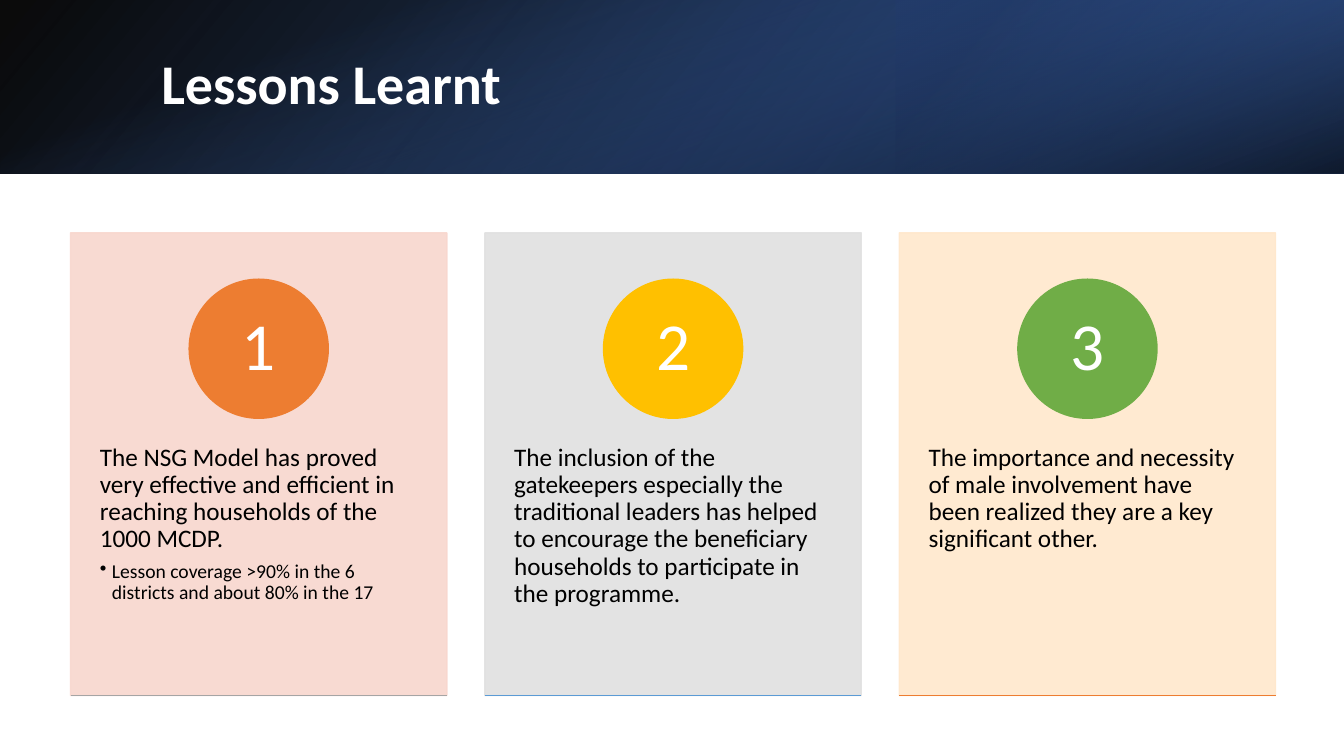
"""Build the Lessons Learnt slide with three numbered cards."""
from dataclasses import dataclass
from typing import Optional

from lxml.etree import SubElement
from pptx import Presentation
from pptx.dml.color import RGBColor
from pptx.enum.shapes import MSO_CONNECTOR as Connector, MSO_SHAPE as Preset
from pptx.enum.text import MSO_ANCHOR as Anchor, MSO_AUTO_SIZE as AutoSize, PP_ALIGN as Align
from pptx.oxml.ns import qn
from pptx.util import Emu, Inches, Pt

SLIDE_WIDTH, SLIDE_HEIGHT = Inches(13.33), Inches(7.5)
FONT = "Calibri"
BLACK = RGBColor(0x00, 0x00, 0x00)
WHITE = RGBColor(0xFF, 0xFF, 0xFF)
NAVY = RGBColor(0x20, 0x38, 0x64)
DENIM = RGBColor(0x2F, 0x55, 0x97)
BLUE = RGBColor(0x44, 0x72, 0xC4)
SKY = RGBColor(0x5B, 0x9B, 0xD5)
ORANGE = RGBColor(0xED, 0x7D, 0x31)
GOLD = RGBColor(0xFF, 0xC0, 0x00)
GREEN = RGBColor(0x70, 0xAD, 0x47)
GREY = RGBColor(0xA5, 0xA5, 0xA5)
ROSE = RGBColor(0xF8, 0xD7, 0xCE)
SILVER = RGBColor(0xE1, 0xE1, 0xE1)
PEACH = RGBColor(0xFF, 0xE8, 0xCC)


def across(percent: float) -> Emu:
    """Return a share of the slide's width."""
    return Emu(round(SLIDE_WIDTH * percent / 100))


def down(percent: float) -> Emu:
    """Return a share of the slide's height."""
    return Emu(round(SLIDE_HEIGHT * percent / 100))


HEADER_HEIGHT = down(22.93)
CARD_LEFT, CARD_WIDTH, CARD_PITCH = across(5.25), across(28), across(30.83)
CARD_TOP, CARD_HEIGHT = down(30.8), down(61.2)
LESSON_TOP, LESSON_HEIGHT = down(54), down(36.67)
CIRCLE_TOP, CIRCLE_SIZE, NUMBER_SIZE = down(36.93), down(18.4), down(12.93)


@dataclass(frozen=True)
class Stop:
    """Describe one gradient stop."""
    position: float
    color: RGBColor
    opacity: int


@dataclass(frozen=True)
class Band:
    """Describe one gradient layer of the header."""
    left: Emu
    width: Emu
    stops: tuple[Stop, Stop]
    angle: int
    rotation: int = 0
    flipped: bool = False


@dataclass(frozen=True)
class Lesson:
    """Describe one lesson card."""
    text: str
    card: RGBColor
    circle: RGBColor
    rule: RGBColor
    detail: Optional[str] = None


BANDS = (
    Band(0, SLIDE_WIDTH, (Stop(0, BLACK, 96), Stop(1, DENIM, 100)), 140, flipped=True),
    Band(across(66.67), across(33.33), (Stop(0.19, NAVY, 68), Stop(1, BLUE, 79)),
         320, 180, True),
    Band(0, SLIDE_WIDTH, (Stop(0.23, BLUE, 0), Stop(0.99, BLACK, 74)), 340, 90),
)
LESSONS = (
    Lesson("The NSG Model has proved very effective and efficient in reaching "
           "households of the 1000 MCDP.", ROSE, ORANGE, GREY,
           "Lesson coverage >90% in the 6 districts and about 80% in the 17"),
    Lesson("The inclusion of the gatekeepers especially the traditional leaders has "
           "helped to encourage the beneficiary households to participate in the "
           "programme.", SILVER, GOLD, SKY),
    Lesson("The importance and necessity of male involvement have been realized "
           "they are a key significant other.", PEACH, GREEN, ORANGE),
)


def set_opacity(shape, *percents: int) -> None:
    """Give the shape's colours their opacities in order."""
    colors = list(shape._element.spPr.iter(qn("a:srgbClr")))
    for color, percent in zip(colors, percents):
        SubElement(color, qn("a:alpha")).set("val", str(percent * 1000))


def add_band(page, band: Band) -> None:
    """Draw one gradient layer across the header."""
    width, height = band.width, HEADER_HEIGHT
    left, top = band.left, 0
    if band.rotation == 90:
        left, top = left + (width - height) // 2, (height - width) // 2
        width, height = height, width
    shape = page.shapes.add_shape(Preset.RECTANGLE, left, top, width, height)
    shape.shadow.inherit = False
    shape.line.fill.background()
    shape.rotation = band.rotation
    if band.flipped:
        shape._element.spPr.xfrm.set("flipH", "1")
    shape.fill.gradient()
    shape.fill.gradient_angle = 360 - band.angle
    for target, stop in zip(shape.fill.gradient_stops, band.stops):
        target.position = stop.position
        target.color.rgb = stop.color
    set_opacity(shape, *(stop.opacity for stop in band.stops))


def add_solid(page, preset: Preset, left: int, top: int, width: int, height: int,
              color: RGBColor):
    """Draw a preset shape with fill and line in one colour."""
    shape = page.shapes.add_shape(preset, left, top, width, height)
    shape.shadow.inherit = False
    shape.fill.solid()
    shape.fill.fore_color.rgb = color
    shape.line.color.rgb = color
    shape.line.width = Pt(1)
    return shape


def add_frame(page, left: int, top: int, width: int, height: int,
              side: Emu, edge: Emu, anchor: Anchor = Anchor.TOP):
    """Add a wrapping text box and return its text frame."""
    frame = page.shapes.add_textbox(left, top, width, height).text_frame
    frame.word_wrap = True
    frame.auto_size = AutoSize.NONE
    frame.vertical_anchor = anchor
    frame.margin_left = frame.margin_right = side
    frame.margin_top = frame.margin_bottom = edge
    return frame


def write(para, text: str, size: int, color: RGBColor, align: Align = Align.LEFT,
          after: float = 0, bold: bool = False) -> None:
    """Write one run into a paragraph and format both."""
    para.alignment = align
    para.line_spacing = 0.9
    para.space_after = Pt(after)
    span = para.add_run()
    span.text = text
    span.font.name = FONT
    span.font.size = Pt(size)
    span.font.bold = bold
    span.font.color.rgb = color


def add_bullet(para) -> None:
    """Give the paragraph a hanging bullet."""
    properties = para._p.get_or_add_pPr()
    properties.set("marL", str(Inches(0.12)))
    properties.set("indent", str(-Inches(0.12)))
    SubElement(properties, qn("a:buChar")).set("char", "•")


def add_lesson(page, index: int, lesson: Lesson) -> None:
    """Draw one card with its text, numbered circle and bottom rule."""
    left = CARD_LEFT + index * CARD_PITCH
    bottom = CARD_TOP + CARD_HEIGHT
    card = add_solid(page, Preset.RECTANGLE, left, CARD_TOP, CARD_WIDTH, CARD_HEIGHT,
                     lesson.card)
    set_opacity(card, 90, 90)

    frame = add_frame(page, left, LESSON_TOP, CARD_WIDTH, LESSON_HEIGHT,
                      across(2.18), down(4.8))
    write(frame.paragraphs[0], lesson.text, 18, BLACK, after=6)
    if lesson.detail:
        para = frame.add_paragraph()
        para.level = 1
        write(para, lesson.detail, 14, BLACK, after=2)
        add_bullet(para)

    circle_left = left + (CARD_WIDTH - CIRCLE_SIZE) // 2
    add_solid(page, Preset.OVAL, circle_left, CIRCLE_TOP, CIRCLE_SIZE, CIRCLE_SIZE,
              lesson.circle)
    inset = (CIRCLE_SIZE - NUMBER_SIZE) // 2
    number = add_frame(page, circle_left + inset, CIRCLE_TOP + inset, NUMBER_SIZE,
                       NUMBER_SIZE, across(0.8), down(0.15), Anchor.MIDDLE)
    write(number.paragraphs[0], str(index + 1), 48, WHITE, Align.CENTER)

    rule = page.shapes.add_connector(Connector.STRAIGHT, left, bottom,
                                     left + CARD_WIDTH, bottom)
    rule.line.color.rgb = lesson.rule
    rule.line.width = Pt(1)
    SubElement(rule._element.spPr, qn("a:effectLst"))


def add_title(page, text: str) -> None:
    """Place the title placeholder in front of the header."""
    title = page.shapes.title
    title.left, title.top = across(11.25), down(5.07)
    title.width, title.height = across(82.37), down(12.8)
    title.text_frame.vertical_anchor = Anchor.MIDDLE
    title.text_frame.auto_size = AutoSize.NONE
    write(title.text_frame.paragraphs[0], text, 40, WHITE, bold=True)
    page.shapes._spTree.append(title._element)


def main() -> None:
    """Build and save the deck."""
    deck = Presentation()
    deck.slide_width, deck.slide_height = SLIDE_WIDTH, SLIDE_HEIGHT
    page = deck.slides.add_slide(deck.slide_layouts[5])
    for band in BANDS:
        add_band(page, band)
    add_title(page, "Lessons Learnt")
    for index, lesson in enumerate(LESSONS):
        add_lesson(page, index, lesson)
    deck.save("out.pptx")


if __name__ == "__main__":
    main()
